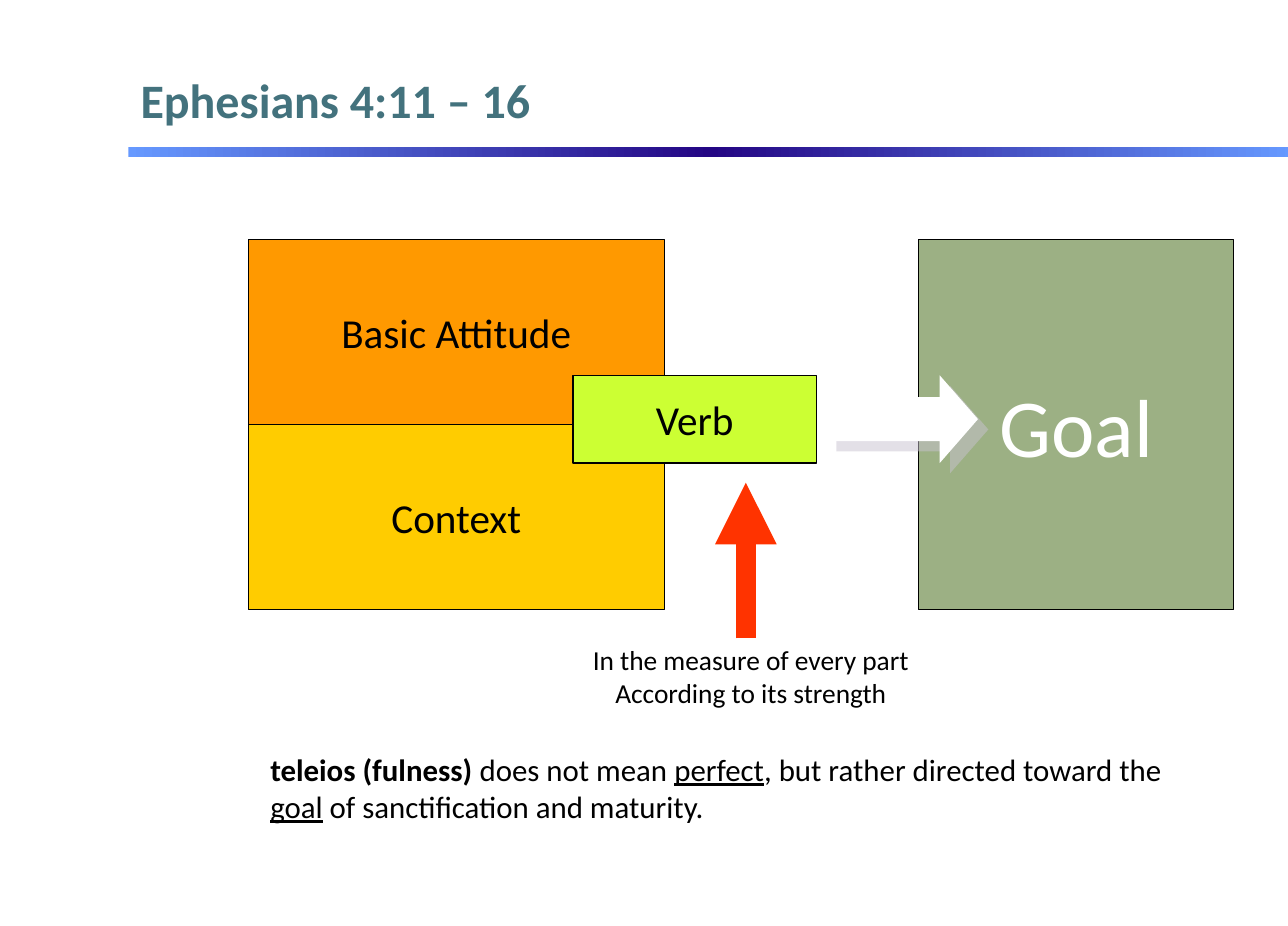
from copy import deepcopy

from pptx import Presentation
from pptx.dml.color import RGBColor
from pptx.enum.shapes import MSO_CONNECTOR, MSO_SHAPE
from pptx.enum.text import MSO_ANCHOR, PP_ALIGN
from pptx.oxml import parse_xml
from pptx.oxml.ns import nsdecls, qn
from pptx.util import Inches, Pt

RECT, RIGHT_ARROW = MSO_SHAPE.RECTANGLE, MSO_SHAPE.RIGHT_ARROW
STRAIGHT = MSO_CONNECTOR.STRAIGHT
MIDDLE, TOP = MSO_ANCHOR.MIDDLE, MSO_ANCHOR.TOP
LEFT, CENTER = PP_ALIGN.LEFT, PP_ALIGN.CENTER

FONT = "Calibri"
BLACK = RGBColor(0x00, 0x00, 0x00)
WHITE = RGBColor(0xFF, 0xFF, 0xFF)
TEAL = RGBColor(0x43, 0x72, 0x7D)
SKY = RGBColor(0x66, 0x99, 0xFF)
INDIGO = RGBColor(0x24, 0x06, 0x84)
ORANGE = RGBColor(0xFF, 0x99, 0x00)
YELLOW = RGBColor(0xFF, 0xCC, 0x00)
LIME = RGBColor(0xCC, 0xFF, 0x33)
SAGE = RGBColor(0x9C, 0xB0, 0x84)
RED = RGBColor(0xFF, 0x33, 0x00)


def add_run(p, text, size, color=BLACK, bold=False, underline=False):
    r = p.add_run()
    r.text = text
    f = r.font
    f.name, f.size, f.bold, f.underline = FONT, Pt(size), bold, underline
    f.color.rgb = color


def add_text_box(s, x, y, w, h, align=LEFT, anchor=TOP):
    tf = s.shapes.add_textbox(Inches(x), Inches(y), Inches(w), Inches(h)).text_frame
    tf.word_wrap = True
    tf.vertical_anchor = anchor
    p = tf.paragraphs[0]
    p.alignment = align
    return p


def add_plain_shape(s, kind, x, y, w, h):
    sp = s.shapes.add_shape(kind, Inches(x), Inches(y), Inches(w), Inches(h))
    sp.shadow.inherit = False
    sp.line.fill.background()
    return sp


def add_block(s, text, x, y, w, h, fill, size=24, color=BLACK):
    sp = add_plain_shape(s, RECT, x, y, w, h)
    sp.fill.solid()
    sp.fill.fore_color.rgb = fill
    sp.line.color.rgb = BLACK
    sp.line.width = Pt(0.75)
    tf = sp.text_frame
    tf.word_wrap = False
    tf.vertical_anchor = MIDDLE
    p = tf.paragraphs[0]
    p.alignment = CENTER
    add_run(p, text, size, color)


def add_header(s, x, y, w):
    # Title
    p = add_text_box(s, x, y, w, 0.72, anchor=MIDDLE)
    add_run(p, "Ephesians 4:11 – 16", 28, TEAL, bold=True)

    # Gradient rule, running to the right edge
    rule = add_plain_shape(s, RECT, x, y + 0.75, 9.43, 0.08)
    rule.fill.gradient()
    rule.fill.gradient_angle = 0
    stop_list = rule._element.spPr.find(qn("a:gradFill")).find(qn("a:gsLst"))
    stop_list.insert(1, deepcopy(stop_list[0]))
    stops = zip(rule.fill.gradient_stops, (0, 0.5, 1), (SKY, INDIGO, SKY))
    for stop, position, color in stops:
        stop.position = position
        stop.color.rgb = color


def add_goal_arrow(s, x, y, w, h):
    arrow = add_plain_shape(s, RIGHT_ARROW, x, y, w, h)
    arrow.adjustments[0], arrow.adjustments[1] = 0.5, 0.436
    arrow.fill.solid()
    arrow.fill.fore_color.rgb = WHITE
    arrow._element.spPr.find(qn("a:effectLst")).append(parse_xml(
        f'<a:outerShdw {nsdecls("a")} dist="{Pt(8.5)}" dir="2700000" algn="ctr" '
        'rotWithShape="0"><a:srgbClr val="C9C2D1"><a:alpha val="50000"/>'
        '</a:srgbClr></a:outerShdw>'))


def add_strength_arrow(s, x, y, length):
    line = s.shapes.add_connector(
        STRAIGHT, Inches(x), Inches(y + length), Inches(x), Inches(y))
    line.line.color.rgb = RED
    line.line.width = Pt(12)
    spPr = line._element.spPr
    spPr.find(qn("a:ln")).append(
        parse_xml(f'<a:tailEnd {nsdecls("a")} type="triangle"/>'))
    spPr.append(parse_xml(f'<a:effectLst {nsdecls("a")}/>'))


def add_diagram(s, x, y, h):
    # Stacked blocks and the verb that bridges them
    half = h / 2
    add_block(s, "Basic Attitude", x, y, 3.37, half, ORANGE)
    add_block(s, "Context", x, y + half, 3.37, half, YELLOW)
    verb_x, verb_y, verb_h = x + 2.63, y + 1.1, 0.71
    add_block(s, "Verb", verb_x, verb_y, 1.97, verb_h, LIME)

    # Arrow up to the verb, with its caption
    add_strength_arrow(s, x + 4.03, y + 1.97, 1.26)
    p = add_text_box(s, verb_x, y + 3.22, 2.88, 0.64, CENTER)
    add_run(p, "In the measure of every part", 16)
    p.add_line_break()
    add_run(p, "According to its strength", 16)

    # Goal and the arrow into it
    add_block(s, "Goal", x + 5.43, y, 2.55, h, SAGE, 48, WHITE)
    add_goal_arrow(s, x + 4.68, verb_y, 1.23, verb_h)


def add_note(s, x, y, w, h):
    p = add_text_box(s, x, y, w, h)
    add_run(p, "teleios (fulness) ", 18, bold=True)
    add_run(p, "does not mean ", 18)
    add_run(p, "perfect", 18, underline=True)
    add_run(p, ", but rather directed toward the ", 18)
    add_run(p, "goal", 18, underline=True)
    add_run(p, " of sanctification and maturity.", 18)


def main():
    prs = Presentation()
    prs.slide_width, prs.slide_height = Inches(10.43), Inches(7.5)
    s = prs.slides.add_slide(prs.slide_layouts[6])
    add_header(s, 1.04, 0.44, 9.02)
    add_diagram(s, 2.01, 1.94, 3)
    add_note(s, 2.09, 6.03, 7.89, 0.71)
    prs.save("out.pptx")


if __name__ == "__main__":
    main()
